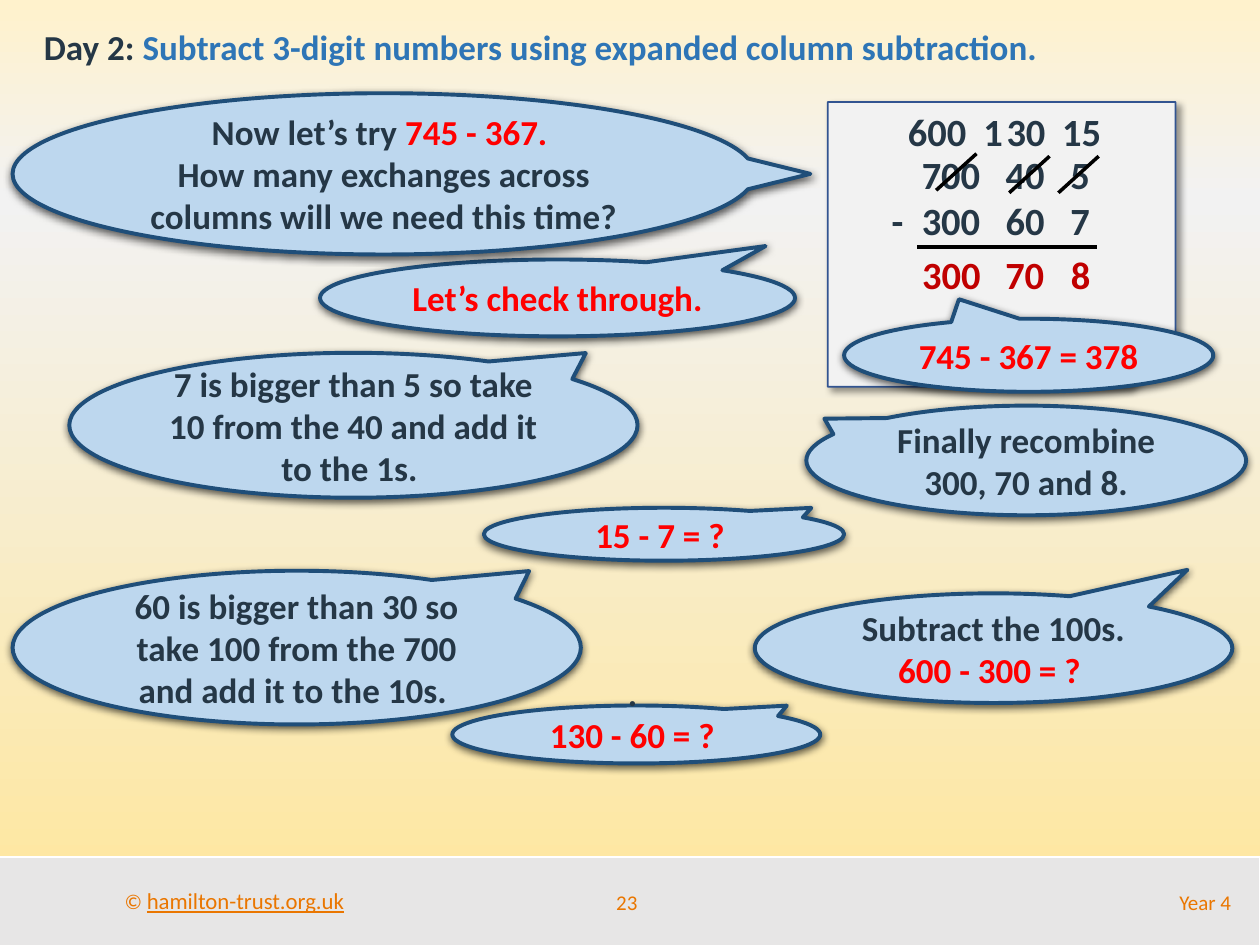
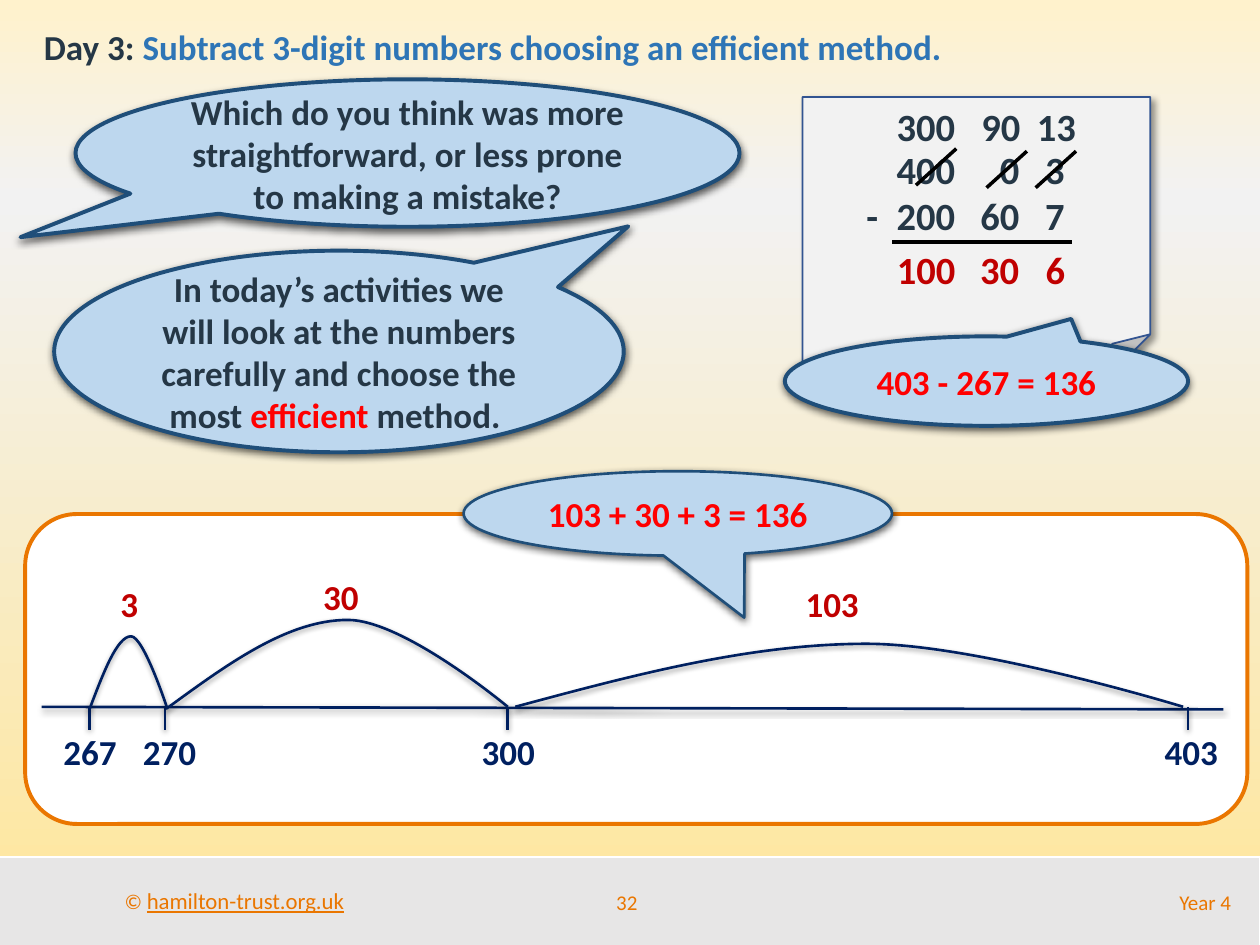
from lxml.etree import SubElement
from pptx import Presentation
from pptx.dml.color import RGBColor
from pptx.enum.shapes import MSO_CONNECTOR, MSO_SHAPE as SHAPE
from pptx.enum.text import MSO_ANCHOR as ANCHOR, PP_ALIGN as ALIGN
from pptx.oxml.ns import qn
from pptx.util import Emu, Pt

PX = 9144  # EMU per px, 100 px to the inch
FONT = "Calibri"
COLORS = {
    "ink": "253746", "blue": "2E75B6", "red": "FF0000", "crimson": "C00000",
    "orange": "EA7600", "navy": "002060", "black": "000000", "white": "FFFFFF",
    "bubble": "BDD7EE", "bubble_edge": "1F4E79", "card": "F2F2F2",
    "card_edge": "325491", "band": "E7E6E6",
}
BACKGROUND = [(0, "FFF2CC"), (21, "F2F2F2"), (100, "FFE699")]
# opacity %, blur pt, distance pt, direction in degrees
BUBBLE_SHADOW = (63, 4.5, 1.5, 90)
CARD_SHADOW = (40, 4, 3, 45)
LINE_SHADOW = (38, 3.1, 1.6, 90)
# column edges and marks of the subtraction card, from its left and top
DIGIT_STOPS = (60, 121, 172, 208)
RESULT_LEFTS = (65, 131, 183)
STRIKE_TOPS = (41, 43, 43)


def px(*lengths):
    return [Emu(round(n * PX)) for n in lengths]


def rgb(name):
    return RGBColor.from_string(COLORS[name])


def write(tf, text, color="ink", size=20, bold=True, underline=False,
          align=ALIGN.LEFT, tabs=()):
    """Append a run; a leading line break starts a new paragraph.

    tabs are right-aligned stops in px.
    """
    p = tf.add_paragraph() if text.startswith("\n") else tf.paragraphs[-1]
    p.alignment = align
    pPr = p._p.get_or_add_pPr()
    if tabs:
        tab_list = SubElement(pPr, qn("a:tabLst"))
        for stop in tabs:
            SubElement(tab_list, qn("a:tab"), pos=str(stop * PX), algn="r")
    r = p.add_run()
    r.text = text.lstrip("\n")
    font = r.font
    font.name, font.size, font.bold = FONT, Pt(size), bold
    font.color.rgb = rgb(color)
    if underline:
        font.underline = True


def set_effects(sp, shadow=None):
    """Replace the theme shadow by the given one, or by none."""
    effects = SubElement(sp._element.spPr, qn("a:effectLst"))
    if shadow:
        opacity, blur, distance, angle = shadow
        outer = SubElement(effects, qn("a:outerShdw"), blurRad=str(Pt(blur)),
                           dist=str(Pt(distance)), dir=str(angle * 60000),
                           algn="t", rotWithShape="0")
        clr = SubElement(outer, qn("a:srgbClr"), val=COLORS["black"])
        SubElement(clr, qn("a:alpha"), val=str(opacity * 1000))


def curve_segments(sp):
    """Turn every three straight segments of a freeform into one cubic."""
    outline = sp._element.find(".//" + qn("a:custGeom")).find(
        ".//" + qn("a:moveTo")).getparent()
    segments = outline.findall(qn("a:lnTo"))
    for i in range(0, len(segments), 3):
        cubic = SubElement(outline, qn("a:cubicBezTo"))
        for segment in segments[i:i + 3]:
            cubic.append(segment[0])
            outline.remove(segment)


class Deck:
    def __init__(self):
        self.prs = Presentation()
        self.prs.slide_width, self.prs.slide_height = px(1000, 750)
        self.s = None

    def new_slide(self, day, topic, number):
        self.s = self.prs.slides.add_slide(self.prs.slide_layouts[6])
        self.background()
        self.shape(SHAPE.RECTANGLE, (-6, 680, 1006, 72), "band", "white", 1)
        small = dict(color="orange", size=12, bold=False)
        tf = self.text((89, 699, 197, 32), "© ", wrap=False, **small)
        write(tf, "hamilton-trust.org.uk", underline=True,
              **{**small, "size": 13})
        for box, text, align in (((458, 696, 79, 40), number, ALIGN.CENTER),
                                 ((580, 696, 407, 40), "Year 4", ALIGN.RIGHT)):
            self.text(box, text, anchor=ANCHOR.MIDDLE, align=align, **small)
        title = self.text((25, 15, 961, 44), day + ": ")
        write(title, topic, "blue")

    def background(self):
        self.s.background.fill.gradient()
        grad = self.s.element.find(".//" + qn("a:gradFill"))
        stops = grad.find(qn("a:gsLst"))
        for old in list(stops):
            stops.remove(old)
        for percent, color in BACKGROUND:
            gs = SubElement(stops, qn("a:gs"), pos=str(percent * 1000))
            SubElement(gs, qn("a:srgbClr"), val=color)
        grad.find(qn("a:lin")).set("ang", str(90 * 60000))

    def text(self, box, text, wrap=True, anchor=ANCHOR.TOP, left=10, **fmt):
        tf = self.s.shapes.add_textbox(*px(*box)).text_frame
        tf.word_wrap, tf.vertical_anchor = wrap, anchor
        tf.margin_left, = px(left)
        write(tf, text, **fmt)
        return tf

    def shape(self, kind, box, fill, edge, width, shadow=None):
        sp = self.s.shapes.add_shape(kind, *px(*box))
        sp.fill.solid()
        sp.fill.fore_color.rgb = rgb(fill)
        sp.line.color.rgb = rgb(edge)
        sp.line.width = Pt(width)
        set_effects(sp, shadow)
        return sp

    def callout(self, box, tip, *runs, width=2.25):
        """Speech bubble; tip is the pointer's offset from the centre,
        as shares of the width and height, and runs are (text, colour)."""
        sp = self.shape(SHAPE.OVAL_CALLOUT, box, "bubble", "bubble_edge",
                        width, BUBBLE_SHADOW)
        sp.adjustments[0], sp.adjustments[1] = tip
        tf = sp.text_frame
        tf.word_wrap, tf.vertical_anchor = True, ANCHOR.MIDDLE
        for text, color in runs:
            write(tf, text, color, align=ALIGN.CENTER)

    def line(self, x1, y1, x2, y2, color="black", width=2, shadow=None):
        ln = self.s.shapes.add_connector(MSO_CONNECTOR.STRAIGHT,
                                         *px(x1, y1, x2, y2))
        ln.line.color.rgb = rgb(color)
        ln.line.width = Pt(width)
        set_effects(ln, shadow)

    def jump(self, start, peak, end):
        """Curved hop along the number line, through the peak."""
        (x0, y0), (xp, yp), (x1, _) = start, peak, end
        third = (xp - x0) / 3
        points = [(x0 + third, (y0 + yp) / 2), (x0 + 2 * third, yp), peak,
                  (xp + 0.35 * (x1 - xp), yp), end, end]
        fb = self.s.shapes.build_freeform(*px(*start))
        fb.add_line_segments([px(*pt) for pt in points], close=False)
        sp = fb.convert_to_shape()
        curve_segments(sp)
        sp.fill.background()
        sp.line.color.rgb = rgb("navy")
        sp.line.width = Pt(1.5)
        set_effects(sp, LINE_SHADOW)

    def subtraction(self, x, y, hundreds, tens_ones, top, bottom, result,
                    hundreds_stops, strikes):
        """Card with an expanded column subtraction and its exchanges."""
        sp = self.shape(SHAPE.FOLDED_CORNER, (x, y, 276, 226), "card",
                        "card_edge", 1, CARD_SHADOW)
        tf = sp.text_frame
        tf.vertical_anchor = ANCHOR.TOP
        tf.margin_left, tf.margin_top = px(0, 39)
        for row in ("\t\t" + "\t".join(top), "\n\t-\t" + "\t".join(bottom)):
            write(tf, row, size=22, tabs=DIGIT_STOPS)
        self.line(x + 71, y + 115, x + 214, y + 115)
        for digits, left in zip(result, RESULT_LEFTS):
            self.text((x + left, y + 113, 75, 47), digits, color="crimson",
                      size=22)
        self.text((x + 132, y, 100, 47), "\t".join(tens_ones), size=22,
                  tabs=(75,))
        self.text((x, y, 160, 47), "\t" + "\t".join(hundreds), left=0,
                  size=22, tabs=hundreds_stops)
        for left, drop in zip(strikes, STRIKE_TOPS):
            self.line(x + left, y + drop + 29, x + left + 32, y + drop)

    def number_line(self, ticks, jumps):
        self.shape(SHAPE.ROUNDED_RECTANGLE, (20, 408, 970, 246), "white",
                   "orange", 2.25)
        style = dict(color="navy", width=1.5, shadow=LINE_SHADOW)
        self.line(33, 561, 971, 563, **style)
        for label, x, center in ticks:
            self.line(x, 561, x, 579, **style)
            self.text((center - 37, 575, 75, 44), label, color="navy",
                      align=ALIGN.CENTER)
        for label, center, y, points in jumps:
            self.jump(*points)
            self.text((center - 37, y, 75, 44), label, color="crimson",
                      align=ALIGN.CENTER)


def exchange_slide(deck):
    deck.new_slide("Day 2", "Subtract 3-digit numbers using expanded column "
                   "subtraction.", "23")
    deck.subtraction(657, 81, ("600", "1"), ("30", "15"), ("700", "40", "5"),
                     ("300", "60", "7"), ("300", "70", "8"),
                     (110, 139), (86, 144, 183))
    corner = (0.409, -0.498)
    deck.callout((670, 253, 293, 58), (-0.189, -0.768),
                 ("745 - 367 = 378", "red"))
    deck.callout((10, 453, 451, 122), corner,
                 ("60 is bigger than 30 so take 100 from the 700 and add it "
                  "to the 10s. ", "ink"))
    deck.callout((599, 471, 379, 87), (0.406, -0.715),
                 ("Subtract the 100s. ", "ink"), ("600 - 300 = ? ", "red"))
    deck.callout((254, 206, 377, 61), (0.438, -0.676),
                 ("Let’s check through.", "red"))
    deck.callout((640, 322, 349, 87), (-0.459, -0.381),
                 ("Finally recombine 300, 70 and 8.", "ink"))
    deck.callout((10, 74, 589, 128), (0.575, 0),
                 ("Now let’s try ", "ink"), ("745 - 367. ", "red"),
                 ("\nHow many exchanges across columns will we need this "
                  "time?", "ink"))
    deck.callout((55, 280, 451, 115), corner,
                 ("7 is bigger than 5 so take 10 from the 40 and add it to "
                  "the 1s. ", "ink"))
    deck.callout((384, 403, 286, 42), corner, ("15 - 7 = ? ", "red"))
    deck.callout((359, 560, 292, 46), corner, ("130 - 60 = ? ", "red"))
    deck.text((472, 528, 60, 44), ".", anchor=ANCHOR.MIDDLE,
              align=ALIGN.CENTER)


def method_slide(deck):
    deck.new_slide("Day 3", "Subtract 3-digit numbers choosing an efficient "
                   "method.", "32")
    deck.callout((60, 63, 527, 117), (-0.583, 0.571),
                 ("Which do you think was more straightforward, or less "
                  "prone to making a mistake?", "ink"))
    deck.number_line(
        [("267", 71, 71), ("270", 131, 134), ("300", 403, 403),
         ("403", 943, 945)],
        [("3", 102, 457, ((71, 563), (104, 505), (133, 563))),
         ("30", 270, 452, ((134, 561), (276, 492), (403, 561))),
         ("103", 660, 457, ((409, 561), (688, 511), (939, 561)))])
    deck.callout((368, 374, 340, 67), (0.155, 1.234),
                 ("103 + 30 + 3 = 136", "red"), width=1.5)
    deck.subtraction(637, 77, ("300",), ("90", "13"), ("400", "0", "3"),
                     ("200", "60", "7"), ("100", "30", "6"),
                     (121,), (90, 146, 185))
    deck.callout((623, 267, 320, 71), (0.21, -0.696),
                 ("403 - 267 = 136", "red"))
    deck.callout((43, 199, 452, 160), (0.508, -0.621),
                 ("In today’s activities we will look at the numbers "
                  "carefully and choose the most ", "ink"),
                 ("efficient", "red"), (" method. ", "ink"))


def main():
    deck = Deck()
    exchange_slide(deck)
    method_slide(deck)
    deck.prs.save("out.pptx")


if __name__ == "__main__":
    main()
